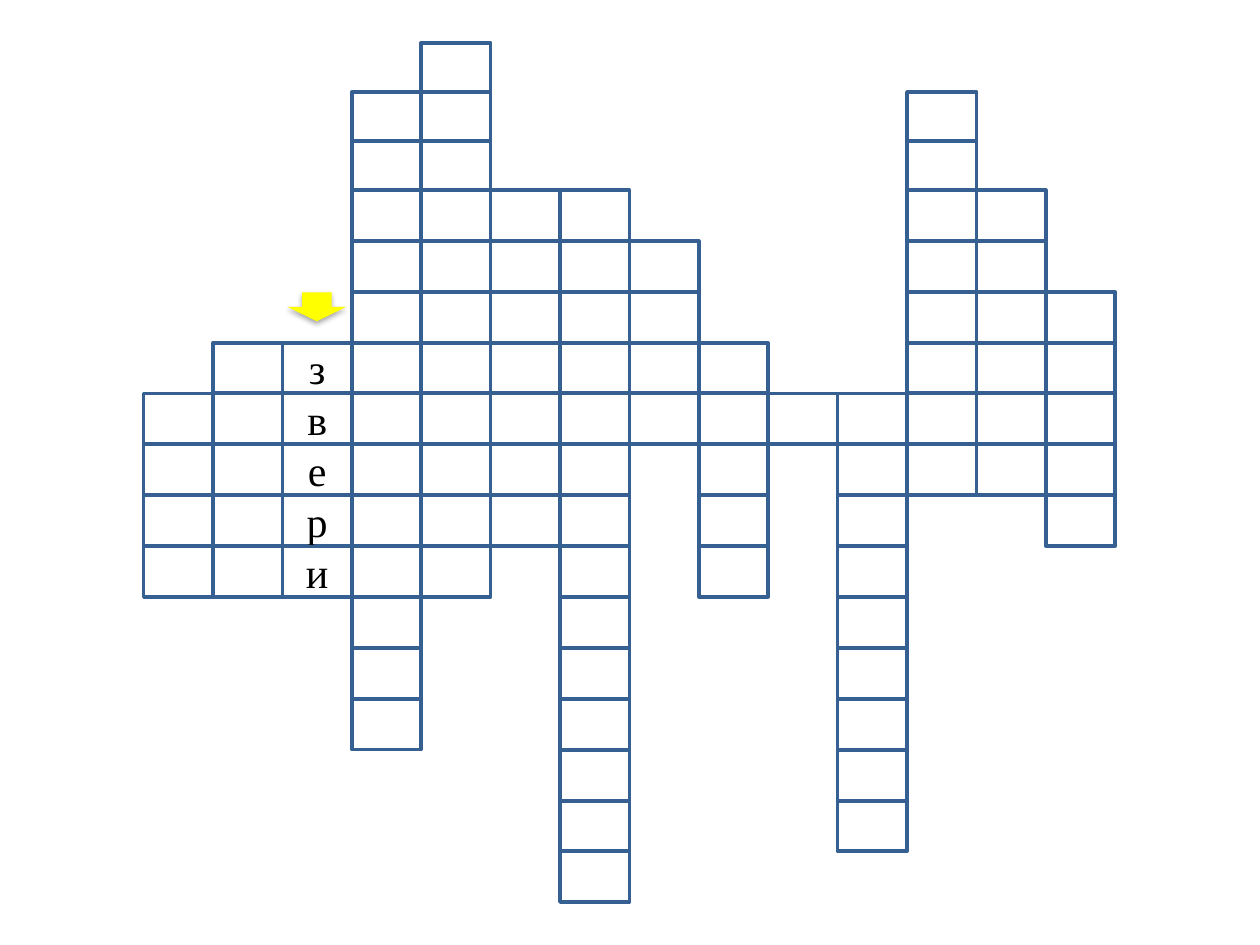
from dataclasses import dataclass

from lxml import etree
from pptx import Presentation
from pptx.dml.color import RGBColor
from pptx.enum import shapes, text
from pptx.oxml import ns
from pptx.util import Emu, Inches, Pt


@dataclass(frozen=True)
class Theme:
    paper: RGBColor = RGBColor(0xFF, 0xFF, 0xFF)
    grid: RGBColor = RGBColor(0x37, 0x60, 0x92)
    ink: RGBColor = RGBColor(0, 0, 0)
    pointer: RGBColor = RGBColor(0xFF, 0xFF, 0)
    font: str = "Times New Roman"
    letter_size: Pt = Pt(24)
    border: Pt = Pt(2)


@dataclass(frozen=True)
class Word:
    column: int
    first_row: int
    last_row: int


THEME = Theme()
LEFT, LAST_LEFT, LAST_COLUMN = 1.14, 8.3, 13
COLUMN_STEP = (LAST_LEFT - LEFT) / LAST_COLUMN
BEND_ROW, BEND_TOP, UPPER_STEP = 3, 1.51, 0.39
LAST_ROW, LAST_TOP = 16, 6.76
LOWER_STEP = (LAST_TOP - BEND_TOP) / (LAST_ROW - BEND_ROW)
CELL_HEIGHT = 0.4

WORDS = (
    Word(1, 6, 10),
    Word(0, 7, 10),
    Word(3, 1, 13),
    Word(4, 0, 10),
    Word(5, 3, 9),
    Word(6, 3, 16),
    Word(7, 4, 7),
    Word(8, 6, 10),
    Word(10, 7, 15),
    Word(11, 1, 8),
    Word(12, 3, 8),
    Word(13, 5, 9),
    Word(9, 7, 7),
)
KEYWORD = "звери"
KEY_COLUMN, KEY_ROW = 2, 6


def row_top(row: int) -> float:
    step = UPPER_STEP if row < BEND_ROW else LOWER_STEP
    return BEND_TOP + (row - BEND_ROW) * step


def write(shape, content: str, *, size: Pt, color: RGBColor, font: str) -> None:
    frame = shape.text_frame
    frame.vertical_anchor = text.MSO_ANCHOR.MIDDLE
    paragraph = frame.paragraphs[0]
    paragraph.alignment = text.PP_ALIGN.CENTER
    run = paragraph.add_run()
    run.text = content
    run.font.size = size
    run.font.name = font
    run.font.color.rgb = color


def draw_cell(slide, column: int, row: int, letter: str = "") -> None:
    cell = slide.shapes.add_shape(
        shapes.MSO_SHAPE.RECTANGLE,
        Inches(LEFT + column * COLUMN_STEP),
        Inches(row_top(row)),
        Inches(COLUMN_STEP),
        Inches(CELL_HEIGHT),
    )
    cell.shadow.inherit = False
    cell.fill.solid()
    cell.fill.fore_color.rgb = THEME.paper
    cell.line.color.rgb = THEME.grid
    cell.line.width = THEME.border
    if letter:
        write(cell, letter, size=THEME.letter_size, color=THEME.ink, font=THEME.font)


def draw_word(slide, word: Word) -> None:
    for row in range(word.first_row, word.last_row + 1):
        draw_cell(slide, word.column, row)


def draw_pointer(slide) -> None:
    pointer = slide.shapes.add_shape(
        shapes.MSO_SHAPE.DOWN_ARROW,
        Inches(2.28), Inches(2.32), Inches(0.47), Inches(0.23),
    )
    pointer.shadow.inherit = False
    pointer.fill.solid()
    pointer.fill.fore_color.rgb = THEME.pointer
    pointer.line.fill.background()
    effects = pointer.element.spPr.find(ns.qn("a:effectLst"))
    shadow = etree.SubElement(
        effects, ns.qn("a:outerShdw"),
        blurRad=str(Emu(Pt(3.1))), dist=str(Emu(Pt(1.8))),
        dir="5400000", rotWithShape="0",
    )
    tint = etree.SubElement(shadow, ns.qn("a:srgbClr"), val=str(THEME.ink))
    etree.SubElement(tint, ns.qn("a:alpha"), val="35000")


def main() -> None:
    deck = Presentation()
    deck.slide_width, deck.slide_height = Inches(10), Inches(7.5)
    slide = deck.slides.add_slide(deck.slide_layouts[6])
    for word in WORDS:
        draw_word(slide, word)
    draw_pointer(slide)
    for row, letter in enumerate(KEYWORD, KEY_ROW):
        draw_cell(slide, KEY_COLUMN, row, letter)
    deck.save("out.pptx")


if __name__ == "__main__":
    main()
